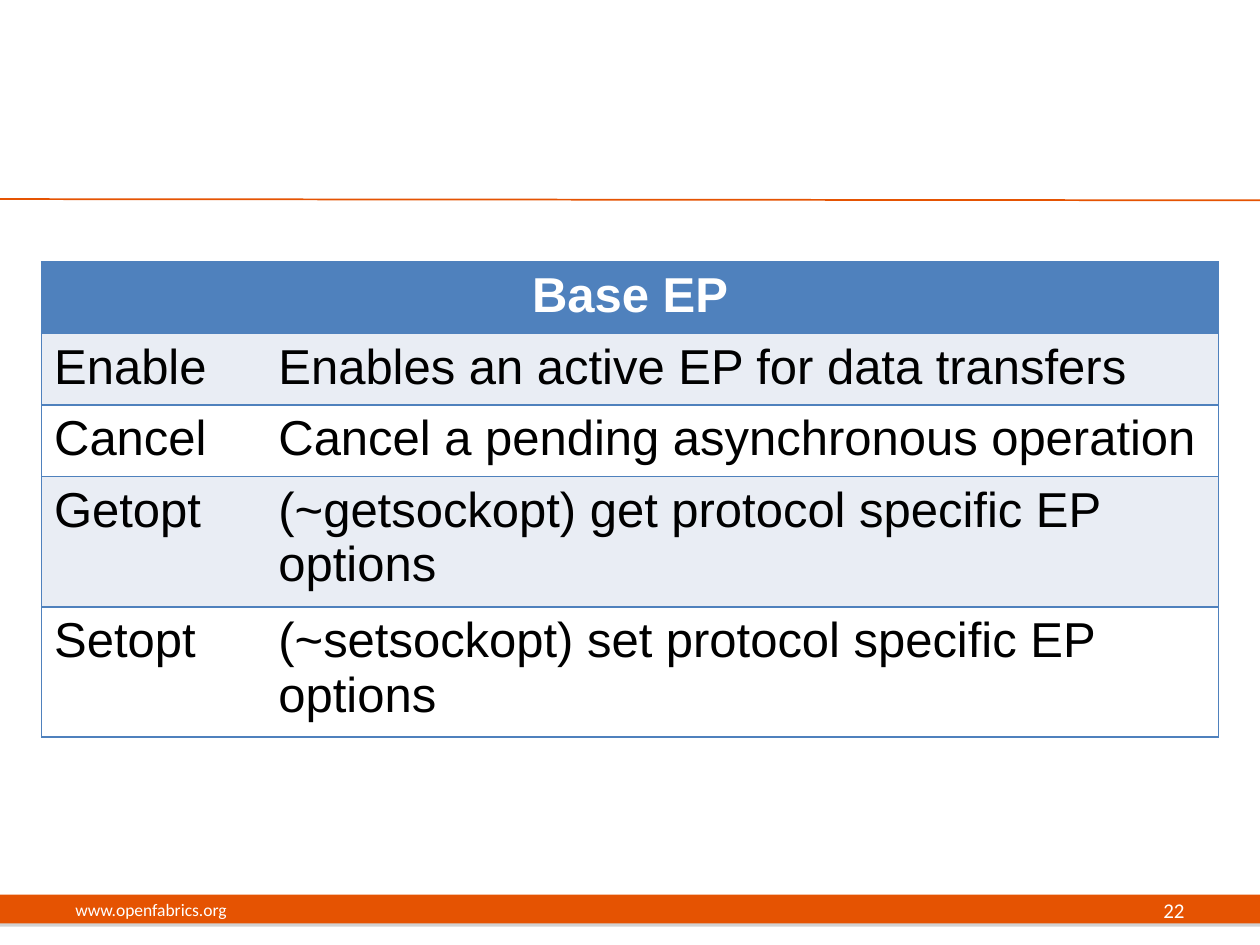
"""Build the Base EP operations slide."""
from typing import NamedTuple

import lxml.etree
import pptx
import pptx.dml.color
import pptx.enum.shapes
import pptx.enum.text
import pptx.oxml.ns
import pptx.util

Inches = pptx.util.Inches
Pt = pptx.util.Pt
Align = pptx.enum.text.PP_ALIGN
Anchor = pptx.enum.text.MSO_ANCHOR
qn = pptx.oxml.ns.qn

COLORS = {
    "orange": "E55302",
    "shadow": "808080",
    "white": "FFFFFF",
    "black": "000000",
    "blue": "4F81BD",
    "band": "E9EDF4",
}


class Operation(NamedTuple):
    name: str
    purpose: str


class FooterText(NamedTuple):
    text: str
    left: float
    width: float
    size: int
    align: Align


OPERATIONS = [
    Operation("Enable", "Enables an active EP for data transfers"),
    Operation("Cancel", "Cancel a pending asynchronous operation"),
    Operation("Getopt", "(~getsockopt) get protocol specific EP options"),
    Operation("Setopt", "(~setsockopt) set protocol specific EP options"),
]
FOOTER_TEXTS = [
    FooterText("www.openfabrics.org", 0.5, 3.17, 10, Align.LEFT),
    FooterText("22", 7.17, 2.33, 12, Align.RIGHT),
]


def rgb(color: str) -> pptx.dml.color.RGBColor:
    return pptx.dml.color.RGBColor.from_string(COLORS[color])


def style_text(paragraph, font_name: str, size: int, color: str, align: Align, bold: bool = False) -> None:
    paragraph.alignment = align
    paragraph.font.name = font_name
    paragraph.font.size = Pt(size)
    paragraph.font.bold = bold
    paragraph.font.color.rgb = rgb(color)


def add_color(parent, color: str):
    fill = lxml.etree.SubElement(parent, qn("a:solidFill"))
    return lxml.etree.SubElement(fill, qn("a:srgbClr"), val=COLORS[color])


def draw_footer_bar(slide) -> None:
    bar = slide.shapes.add_shape(
        pptx.enum.shapes.MSO_SHAPE.RECTANGLE, 0, Inches(7.1), Inches(10), Inches(0.23)
    )
    bar.fill.solid()
    bar.fill.fore_color.rgb = rgb("orange")
    bar.line.fill.background()
    bar.shadow.inherit = False
    effects = bar._element.spPr.find(qn("a:effectLst"))
    shadow = lxml.etree.SubElement(
        effects, qn("a:outerShdw"), dist=str(Pt(1.8)), dir="5400000", rotWithShape="0"
    )
    shade = lxml.etree.SubElement(shadow, qn("a:srgbClr"), val=COLORS["shadow"])
    lxml.etree.SubElement(shade, qn("a:alpha"), val="35000")


def draw_title_rule(slide) -> None:
    rule = slide.shapes.add_connector(
        pptx.enum.shapes.MSO_CONNECTOR.STRAIGHT, 0, Inches(1.58), Inches(10), Inches(1.59)
    )
    rule.line.color.rgb = rgb("orange")
    rule.line.width = Pt(1)
    lxml.etree.SubElement(rule._element.spPr, qn("a:effectLst"))


def draw_footer_text(slide, footer: FooterText) -> None:
    box = slide.shapes.add_textbox(Inches(footer.left), Inches(7.02), Inches(footer.width), Inches(0.4))
    frame = box.text_frame
    frame.word_wrap = True
    frame.vertical_anchor = Anchor.MIDDLE
    frame.text = footer.text
    style_text(frame.paragraphs[0], "Calibri", footer.size, "white", footer.align)


def set_borders(cell, sides: str) -> None:
    properties = cell._tc.get_or_add_tcPr()
    for position, side in enumerate("LRTB"):
        border = lxml.etree.Element(qn(f"a:ln{side}"), w=str(Pt(1)))
        if side in sides:
            add_color(border, "blue")
        else:
            lxml.etree.SubElement(border, qn("a:noFill"))
        properties.insert(position, border)


def fill_cell(cell, text: str, fill: str, sides: str, color: str, align: Align, bold: bool) -> None:
    cell.text = text
    cell.fill.solid()
    cell.fill.fore_color.rgb = rgb(fill)
    style_text(cell.text_frame.paragraphs[0], "Arial", 28, color, align, bold)
    set_borders(cell, sides)


def draw_operations_table(slide, operations: list[Operation]) -> None:
    row_count = len(operations) + 1
    row_height = 0.41
    table = slide.shapes.add_table(
        row_count, 2, Inches(0.33), Inches(2.08), Inches(9.34), Inches(row_height * row_count)
    ).table
    for column, width in zip(table.columns, (1.78, 7.56)):
        column.width = Inches(width)
    heading = table.cell(0, 0)
    heading.merge(table.cell(0, 1))
    fill_cell(heading, "Base EP", "blue", "LRTB", "white", Align.CENTER, True)
    set_borders(table.cell(0, 1), "RTB")
    for row, operation in enumerate(operations, start=1):
        fill = "band" if row % 2 else "white"
        for column, (text, sides) in enumerate(zip(operation, ("LTB", "RTB"))):
            fill_cell(table.cell(row, column), text, fill, sides, "black", Align.LEFT, False)


def main() -> None:
    presentation = pptx.Presentation()
    presentation.slide_width = Inches(10)
    presentation.slide_height = Inches(7.5)
    slide = presentation.slides.add_slide(presentation.slide_layouts[6])
    draw_footer_bar(slide)
    draw_title_rule(slide)
    for footer in FOOTER_TEXTS:
        draw_footer_text(slide, footer)
    draw_operations_table(slide, OPERATIONS)
    presentation.save("out.pptx")


if __name__ == "__main__":
    main()
